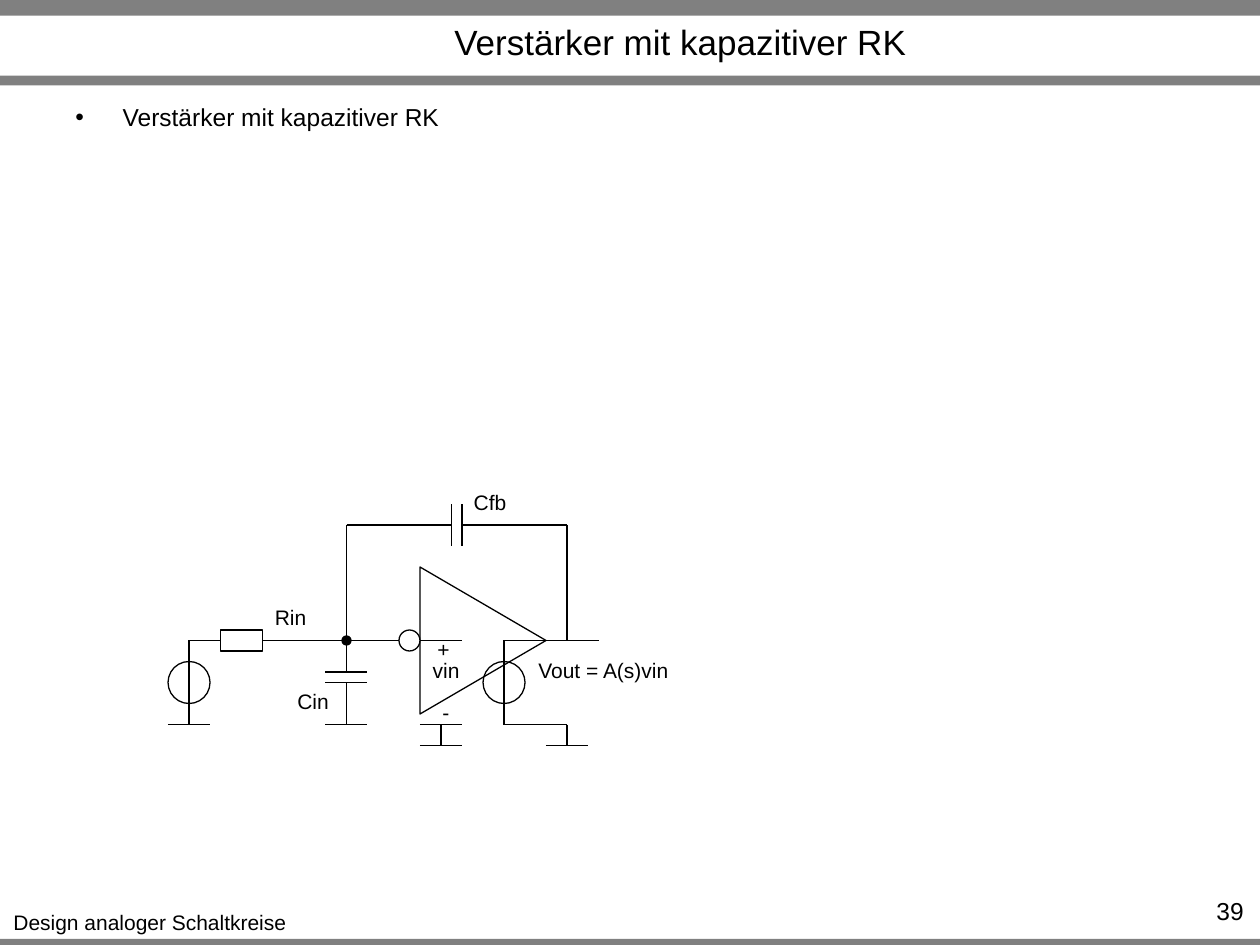
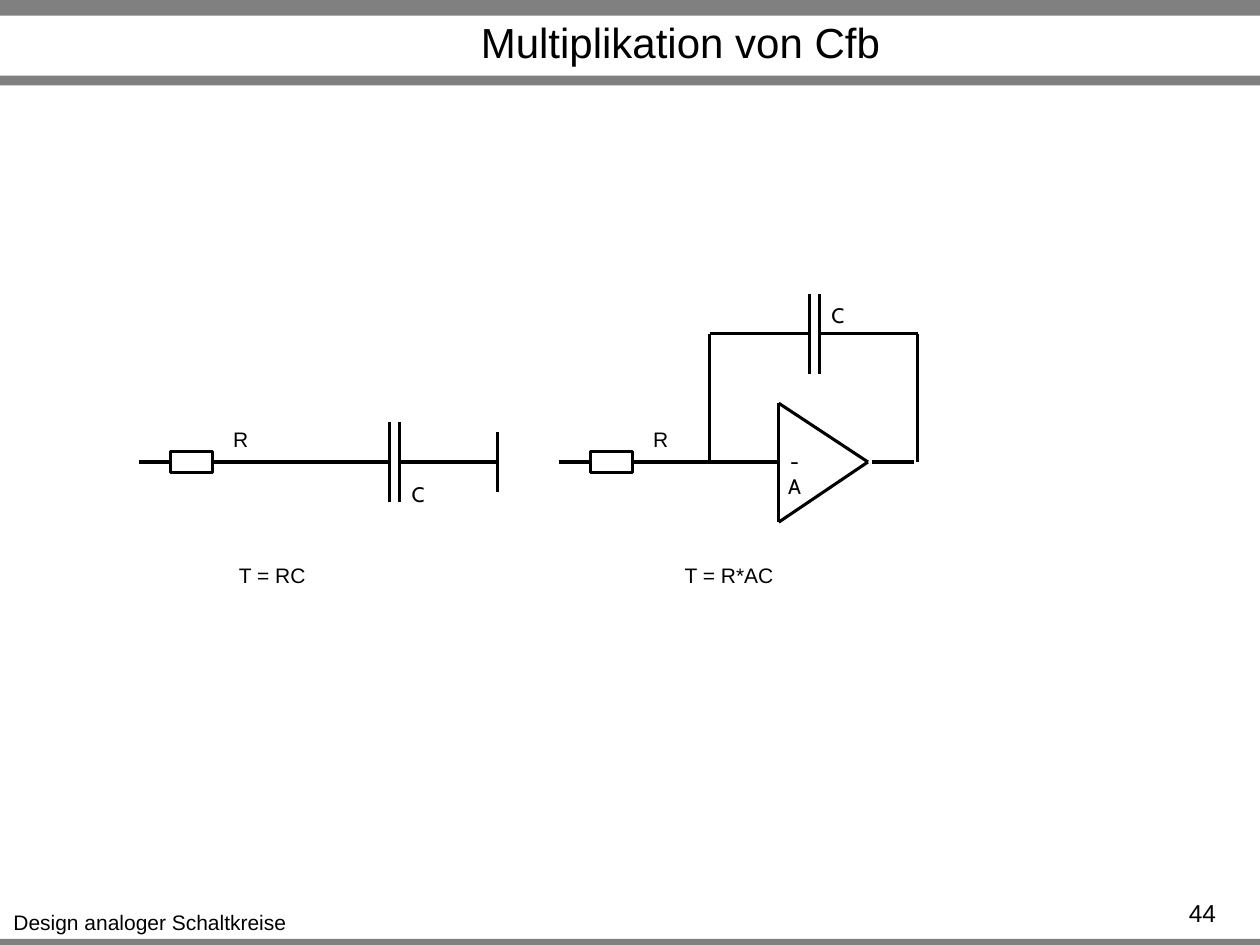
from itertools import pairwise
from lxml import etree
from pptx import Presentation
from pptx.dml import color
from pptx.enum import shapes, text
from pptx.oxml import ns
from pptx.util import Pt

SHAPE = shapes.MSO_SHAPE
ALIGN = text.PP_ALIGN


def rgb(code):
    return color.RGBColor.from_string(code)


def add(node, tag, **attrs):
    return etree.SubElement(node, ns.qn(tag), attrs)


class Sheet:
    ink, band, paper, face = "000000", "808080", "FFFFFF", "Arial"

    def __init__(self, deck):
        self.deck = deck

    def start(self, title, size, weight):
        self.slide = self.deck.slides.add_slide(self.deck.slide_layouts[6])
        self.weight = weight
        for top, height in ((536.5, 6), (0, 9), (43.2, 5.6)):
            self.shape(SHAPE.RECTANGLE, 0, top, 720, height, self.band, False)
        self.label("Design analoger Schaltkreise", 0, 516, 171.4)
        self.prose(title, 93.6, 10, 590.4, 27.4, size=size, mid=True)

    def shape(self, kind, left, top, width, height, fill=None, edge=True):
        item = self.slide.shapes.add_shape(kind, Pt(left), Pt(top), Pt(width), Pt(height))
        item.shadow.inherit = False
        if fill:
            item.fill.solid()
            item.fill.fore_color.rgb = rgb(fill)
        else:
            item.fill.background()
        if edge:
            item.line.color.rgb = rgb(self.ink)
            item.line.width = Pt(self.weight)
        else:
            item.line.fill.background()
        return item

    def wire(self, *points, dot=False):
        for (ax, ay), (bx, by) in pairwise(points):
            item = self.slide.shapes.add_connector(
                shapes.MSO_CONNECTOR.STRAIGHT, Pt(ax), Pt(ay), Pt(bx), Pt(by))
            item.line.color.rgb = rgb(self.ink)
            item.line.width = Pt(self.weight)
            props = item._element.spPr
            if dot:
                add(props.find(ns.qn("a:ln")), "a:tailEnd", type="oval")
            add(props, "a:effectLst")

    def rod(self, x, y, half):
        self.wire((x, y - half), (x, y + half))

    def bar(self, x, y, half=12):
        self.wire((x - half, y), (x + half, y))

    def ring(self, left, top, size, fill=None):
        self.shape(SHAPE.OVAL, left, top, size, size, fill)

    def ohm(self, left, y, start, end):
        self.shape(SHAPE.RECTANGLE, left, y - 6, 24, 12)
        self.wire((start, y), (left, y))
        self.wire((left + 24, y), (end, y))

    def prose(self, words, left, top, width, height, size=12, face=None,
              align=ALIGN.CENTER, wrap=True, mid=False, bullet=False):
        box = self.slide.shapes.add_textbox(Pt(left), Pt(top), Pt(width), Pt(height))
        frame = box.text_frame
        frame.word_wrap = wrap
        frame.vertical_anchor = text.MSO_ANCHOR.MIDDLE if mid else text.MSO_ANCHOR.TOP
        para = frame.paragraphs[0]
        para.text = words
        para.alignment = align
        if bullet:
            props = para._p.get_or_add_pPr()
            props.set("marL", str(Pt(27)))
            props.set("indent", str(Pt(-27)))
            add(props, "a:buFont", typeface=self.face)
            add(props, "a:buChar", char="•")
        look = {"size": Pt(size), "name": face or self.face}
        for key, value in look.items():
            setattr(para.runs[0].font, key, value)
        para.runs[0].font.color.rgb = rgb(self.ink)

    def label(self, words, left, top, width, face=None):
        self.prose(words, left, top, width, 21.6, face=face, wrap=False)

    def page(self, number, left, top, width, height):
        self.prose(number, left, top, width, height, size=14, align=ALIGN.RIGHT)


def circuit(sheet):
    sheet.start("Verstärker mit kapazitiver RK", 20, 0.75)
    sheet.prose("Verstärker mit kapazitiver RK", 36, 54.7, 648, 83.5,
                size=14, align=ALIGN.LEFT, bullet=True)
    sheet.page("39", 655.2, 508.3, 62.6, 17.3)
    amp = sheet.shape(SHAPE.ISOSCELES_TRIANGLE, 234, 330, 84, 72)
    amp.rotation = 90
    sheet.ring(228, 360, 12, sheet.paper)
    for left in (96, 276):
        sheet.ring(left, 378, 24)
    sheet.ohm(126, 366, 108, 198)
    for points in (
        ((108, 414), (108, 366)),
        ((198, 366), (228, 366)),
        ((240, 366), (264, 366)),
        ((288, 414), (288, 366), (342, 366)),
        ((288, 414), (324, 414), (324, 426)),
        ((252, 414), (252, 426)),
        ((198, 366), (198, 384)),
        ((198, 390), (198, 414)),
        ((198, 300), (258, 300)),
        ((264, 300), (324, 300), (324, 366)),
    ):
        sheet.wire(*points)
    sheet.wire((198, 300), (198, 366), dot=True)
    for x, y in ((108, 414), (198, 414), (252, 414), (252, 426), (324, 426),
                 (198, 384), (198, 390)):
        sheet.bar(x, y)
    for x in (258, 264):
        sheet.rod(x, 300, 12)
    for words, left, top, width in (
        ("Cin", 162.7, 390, 32.4),
        ("Rin", 149.8, 342, 32.4),
        ("Cfb", 263.5, 276, 33.1),
        ("vin", 239.8, 372, 30.2),
        ("Vout = A(s)vin", 300.2, 372, 89.3),
        ("+", 242.6, 360, 21.6),
        ("-", 245.5, 396, 18.7),
    ):
        sheet.label(words, left, top, width)


def multiply(sheet):
    sheet.start("Multiplikation von Cfb", 24, 1.75)
    sheet.page("44", 426.2, 509.8, 275.8, 30.2)
    base = 264
    for shift, y in ((0, base), (240, 190.8)):
        sheet.ohm(97.5 + shift, base, 79.4 + shift, 169.4 + shift)
        sheet.label("R", 126 + shift, 240, 23)
        sheet.wire((165.6 + shift, y), (222.4 + shift, y))
        sheet.wire((228.1 + shift, y), (284.4 + shift, y))
        for x in (222.4, 228.1):
            sheet.rod(x + shift, y, 22.7)
    sheet.rod(284.4, base, 17)
    sheet.wire((405.6, 190.8), (405.6, base), (445, base))
    sheet.wire((524.4, 190.8), (524.4, base))
    sheet.wire((498.2, base), (522, base))
    sheet.wire((445, 230.4), (445, 298.4), (496, base), (445, 230.4))
    sheet.label("C", 228.2, 271.4, 21.6, "Cabin")
    sheet.label("C", 468, 169.2, 21.6, "Cabin")
    sheet.prose("-A", 442, 252.7, 24, 21.6, face="Cabin")
    sheet.label("T = RC", 128.9, 318.2, 53.3)
    sheet.label("T = R*AC", 383.8, 318.2, 65.5)


def main():
    deck = Presentation()
    deck.slide_width, deck.slide_height = Pt(720), Pt(540)
    sheet = Sheet(deck)
    circuit(sheet)
    multiply(sheet)
    deck.save("out.pptx")


if __name__ == "__main__":
    main()
